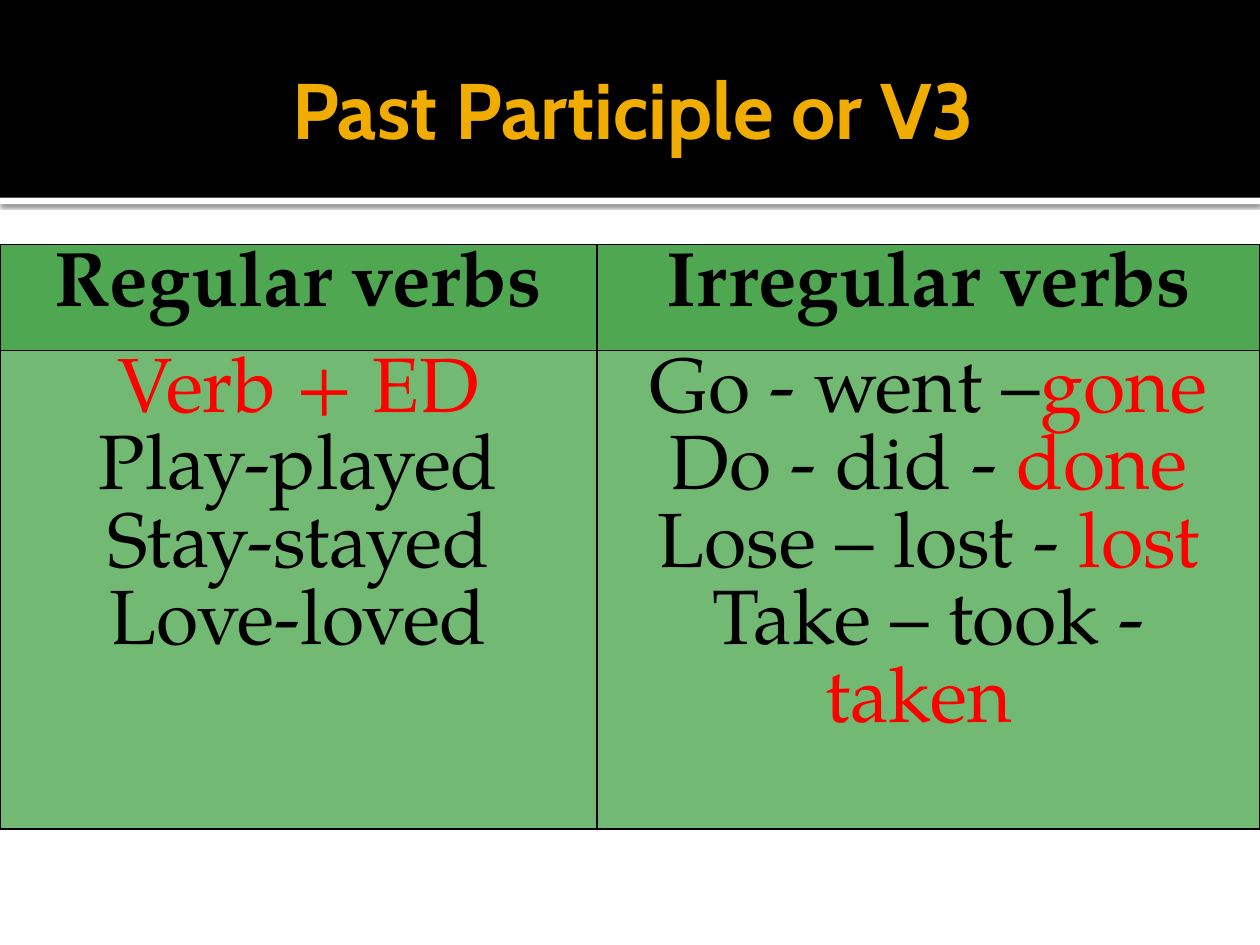
from lxml import etree
from pptx import Presentation
from pptx.dml.color import RGBColor
from pptx.enum.shapes import MSO_SHAPE as Shape
from pptx.enum.text import MSO_ANCHOR as Anchor, PP_ALIGN as Align
from pptx.oxml import parse_xml
from pptx.oxml.ns import nsdecls, qn
from pptx.util import Pt

BLACK, WHITE, RED, GOLD = "000000", "FFFFFF", "FF0000", "F0AD00"
HEADER_GREEN, BODY_GREEN = "4FA851", "72B974"
HEADINGS = ["Regular verbs", "Irregular verbs"]
# One list of lines per column; each line is a list of (text, colour)
REGULAR = [
    [("Verb + ED", RED)],
    [("Play-played", BLACK)],
    [("Stay-stayed", BLACK)],
    [("Love-loved", BLACK)],
]
IRREGULAR = [
    [("Go - went –", BLACK), ("gone", RED)],
    [("Do - did - ", BLACK), ("done", RED)],
    [("Lose – lost - ", BLACK), ("lost", RED)],
    [("Take – took - ", BLACK), ("taken ", RED)],
]


def rgb(value):
    return RGBColor.from_string(value)


def write_text(frame, lines, font="TeX Gyre Pagella", size=44, bold=False):
    """Fill a text frame with centred lines of coloured runs."""
    for i, line in enumerate(lines):
        paragraph = frame.paragraphs[0] if i == 0 else frame.add_paragraph()
        paragraph.alignment = Align.CENTER
        for text, colour in line:
            run = paragraph.add_run()
            run.text = text
            run.font.name = font
            run.font.size = Pt(size)
            run.font.bold = bold
            run.font.color.rgb = rgb(colour)


def add_band(slide, top, height, colour):
    band = slide.shapes.add_shape(Shape.RECTANGLE, Pt(0), Pt(top), Pt(720), Pt(height))
    band.shadow.inherit = False
    band.fill.solid()
    band.fill.fore_color.rgb = rgb(colour)
    band.line.fill.background()
    return band


def add_soft_shadow(band):
    effects = band._element.spPr.find(qn("a:effectLst"))
    effects.append(parse_xml(
        f'<a:outerShdw {nsdecls("a")} blurRad="{Pt(2.5)}" dist="{Pt(0.8)}" '
        f'dir="5400000" rotWithShape="0"><a:srgbClr val="{BLACK}">'
        '<a:alpha val="60000"/></a:srgbClr></a:outerShdw>'))


def add_title(slide, text):
    title = slide.shapes.title
    title.left, title.top, title.width, title.height = Pt(36), Pt(12.24), Pt(648), Pt(98.64)
    frame = title.text_frame
    frame.word_wrap = True
    frame.vertical_anchor = Anchor.MIDDLE
    frame.margin_left, frame.margin_right = Pt(7.2), Pt(3.6)
    frame.margin_top = frame.margin_bottom = Pt(3.6)
    write_text(frame, [[(text, GOLD)]], font="Cabin", size=45, bold=True)
    # Bring the title in front of the bands
    slide.shapes._spTree.append(title._element)


def format_cell(cell, lines, colour, bold=False):
    properties = cell._tc.get_or_add_tcPr()
    for side in ("lnL", "lnR", "lnT", "lnB"):
        border = etree.SubElement(properties, qn(f"a:{side}"), w=str(Pt(1)))
        fill = etree.SubElement(border, qn("a:solidFill"))
        etree.SubElement(fill, qn("a:srgbClr"), val=BLACK)
    cell.fill.solid()
    cell.fill.fore_color.rgb = rgb(colour)
    cell.vertical_anchor = Anchor.TOP
    write_text(cell.text_frame, lines, bold=bold)


def add_verb_table(slide):
    table = slide.shapes.add_table(2, 2, Pt(0), Pt(139.68), Pt(720), Pt(334.08)).table
    for row, height in zip(table.rows, (60.48, 273.6)):
        row.height = Pt(height)
    for column, width in zip(table.columns, (341.28, 378.72)):
        column.width = Pt(width)
    for i, (heading, verbs) in enumerate(zip(HEADINGS, (REGULAR, IRREGULAR))):
        format_cell(table.cell(0, i), [[(heading, BLACK)]], HEADER_GREEN, bold=True)
        format_cell(table.cell(1, i), verbs, BODY_GREEN)


def main():
    deck = Presentation()
    deck.slide_width, deck.slide_height = Pt(720), Pt(540)
    slide = deck.slides.add_slide(deck.slide_layouts[5])

    # Header bands and title
    add_soft_shadow(add_band(slide, 113.04, 3.6, WHITE))
    add_band(slide, 0, 113.04, BLACK)
    add_title(slide, "Past Participle or V3")

    # Verb forms
    add_verb_table(slide)

    deck.save("out.pptx")


if __name__ == "__main__":
    main()
